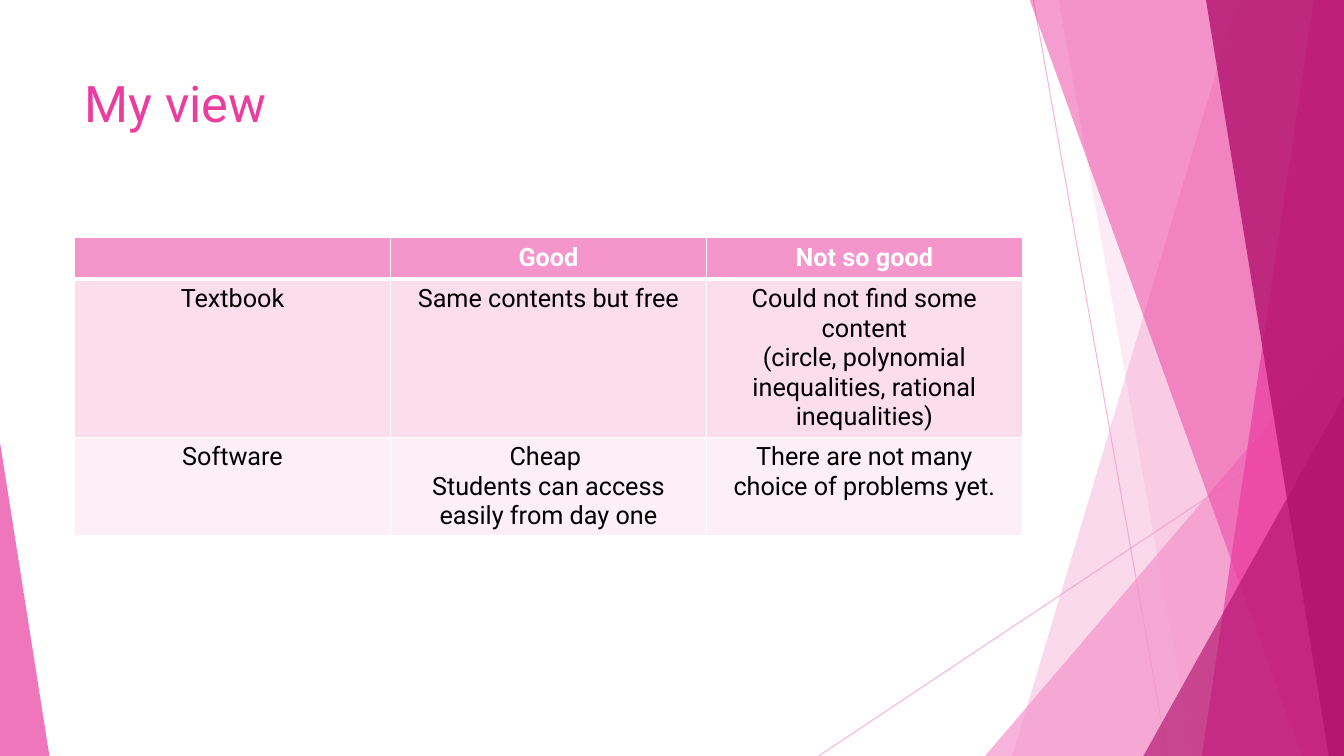
from pptx import Presentation
from pptx.dml.color import RGBColor
from pptx.enum.shapes import MSO_CONNECTOR, MSO_SHAPE
from pptx.enum.text import MSO_ANCHOR, PP_ALIGN
from pptx.oxml.ns import qn
from pptx.util import Inches, Pt
from lxml import etree

STRAIGHT = MSO_CONNECTOR.STRAIGHT
TRIANGLE = MSO_SHAPE.ISOSCELES_TRIANGLE
TOP = MSO_ANCHOR.TOP
LEFT = PP_ALIGN.LEFT
CENTER = PP_ALIGN.CENTER

COLORS = {
    "rose": "F496CB",
    "pink": "EB3D9F",
    "plum": "B2136D",
    "band": "FBDDEC",
    "pale": "FDEFF6",
    "white": "FFFFFF",
    "black": "000000",
}
WIDE, HIGH, EDGE = 13.33, 7.5, -0.01


class Deck:
    def __init__(self, font):
        self.font = font
        self.prs = Presentation()
        self.prs.slide_width = Inches(WIDE)
        self.prs.slide_height = Inches(HIGH)
        self.slide = self.prs.slides.add_slide(self.prs.slide_layouts[5])
        self.shapes = self.slide.shapes

    def color(self, name):
        return RGBColor.from_string(COLORS[name])

    def label(self, frame, text, size, color, align, bold=False):
        frame.text = text
        for para in frame.paragraphs:
            para.alignment = align
            para.font.name = self.font
            para.font.size = Pt(size)
            para.font.bold = bold
            para.font.color.rgb = self.color(color)

    def fade(self, props, alpha):
        tint = props.find(qn("a:solidFill"))[0]
        etree.SubElement(tint, qn("a:alpha"), val=str(alpha * 1000))

    def paint(self, shape, color, alpha):
        shape.shadow.inherit = False
        shape.line.fill.background()
        shape.fill.solid()
        shape.fill.fore_color.rgb = self.color(color)
        self.fade(shape._element.spPr, alpha)

    def line(self, start, end, color, alpha):
        line = self.shapes.add_connector(STRAIGHT, *map(Inches, start + end))
        line.line.width = Pt(0.75)
        line.line.color.rgb = self.color(color)
        props = line._element.spPr
        self.fade(props.find(qn("a:ln")), alpha)
        etree.SubElement(props, qn("a:effectLst"))

    def shard(self, top, base, color, alpha):
        points = [(WIDE, EDGE), (WIDE, HIGH), (base, HIGH)]
        build = self.shapes.build_freeform(Inches(top), Inches(EDGE))
        build.add_line_segments([(Inches(x), Inches(y)) for x, y in points])
        self.paint(build.convert_to_shape(), color, alpha)

    def wedge(self, left, top, width, apex, color, alpha):
        box = map(Inches, (left, top, width, HIGH - top))
        shape = self.shapes.add_shape(TRIANGLE, *box)
        shape.adjustments[0] = apex
        self.paint(shape, color, alpha)

    def title(self, text, box):
        title = self.shapes.title
        title.left, title.top, title.width, title.height = map(Inches, box)
        title.text_frame.vertical_anchor = TOP
        self.label(title.text_frame, text, 36, "pink", LEFT)
        self.shapes._spTree.append(title._element)

    def border(self, cell, sides):
        props = cell._tc.get_or_add_tcPr()
        for side, width in sides.items():
            edge = etree.SubElement(props, qn("a:" + side), w=str(Pt(width)))
            fill = etree.SubElement(edge, qn("a:solidFill"))
            etree.SubElement(fill, qn("a:srgbClr"), val=COLORS["white"])

    def table(self, rows, box, heights, fills):
        frame = self.shapes.add_table(len(rows), len(rows[0]), *map(Inches, box))
        table = frame.table
        for r, row in enumerate(rows):
            table.rows[r].height = Inches(heights[r])
            head = r == 0
            for c, text in enumerate(row):
                cell = table.cell(r, c)
                sides = {"lnL": 1, "lnR": 1, "lnT": 3 if r == 1 else 1,
                         "lnB": 3 if head else 1}
                self.border(cell, sides)
                cell.fill.solid()
                cell.fill.fore_color.rgb = self.color(fills[r])
                ink = "white" if head else "black"
                self.label(cell.text_frame, text, 18, ink, CENTER, head)


def main():
    deck = Deck("Roboto")
    deck.line((10.25, 0), (11.58, HIGH), "rose", 70)
    deck.line((WIDE, 4.03), (8.12, HIGH), "rose", 70)
    deck.shard(12.28, 10.04, "rose", 36)
    deck.shard(10.5, 11.83, "rose", 20)
    deck.wedge(9.77, 3.33, 3.56, 1, "rose", 72)
    deck.shard(10.21, 12.91, "pink", 50)
    deck.shard(13.03, 11.92, "pink", 70)
    deck.shard(11.96, 13.18, "plum", 80)
    deck.wedge(11.34, 3.93, 1.99, 1, "plum", 66)
    deck.wedge(0, 4.39, 0.49, 0, "pink", 70)
    deck.title("My view", (0.74, 0.67, 9.4, 1.44))
    rows = [
        ("", "Good", "Not so good"),
        ("Textbook", "Same contents but free",
         "Could not find some content\n"
         "(circle, polynomial inequalities, rational inequalities)"),
        ("Software", "Cheap \nStudents can access easily from day one",
         "There are not many choice of problems yet."),
    ]
    deck.table(rows, (0.74, 2.36, 9.4, 2.94), (0.41, 1.56, 0.97),
               ("rose", "band", "pale"))
    deck.prs.save("out.pptx")


if __name__ == "__main__":
    main()
